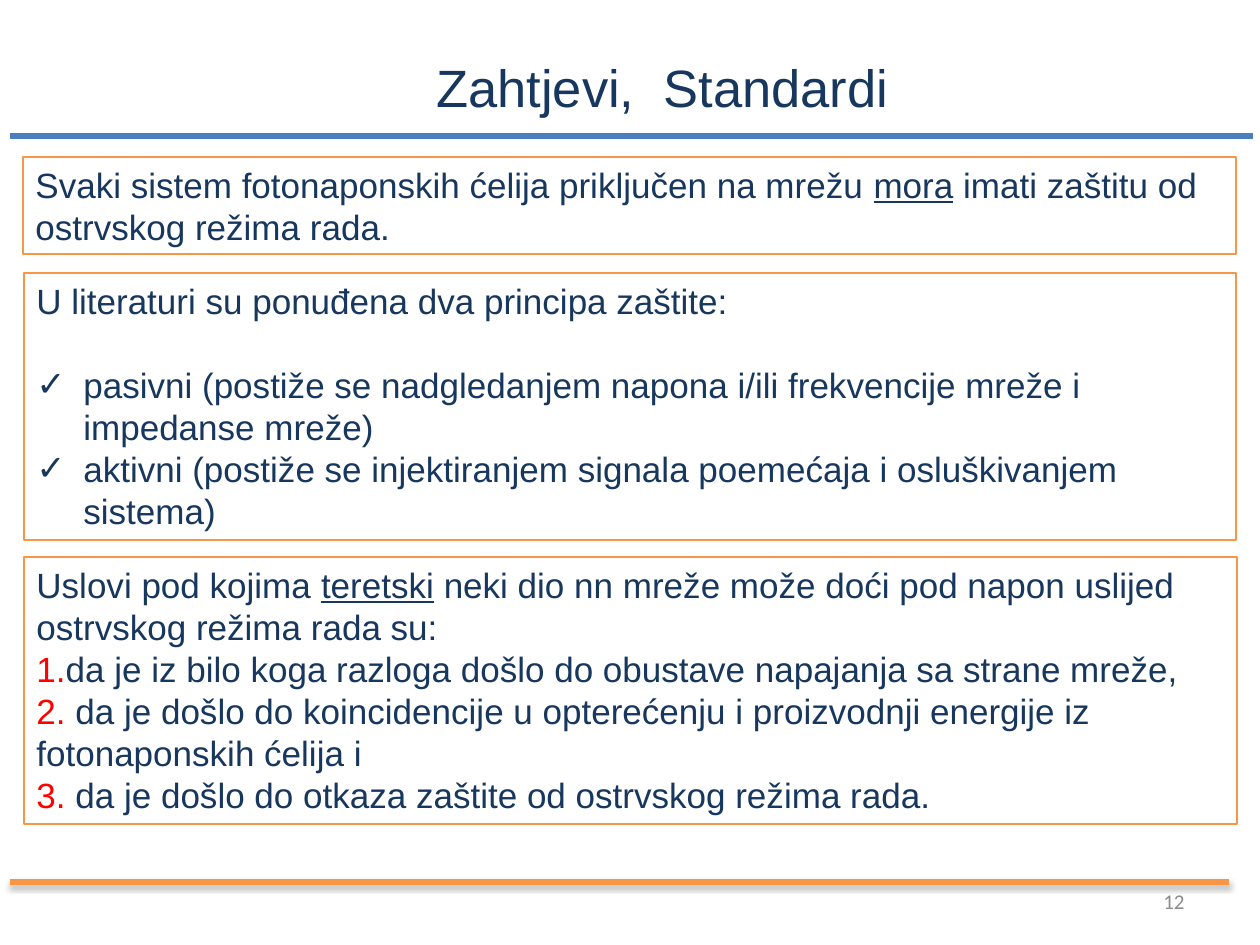
"""Build the slide on requirements and standards for islanding protection."""
from lxml import etree
from pptx import Presentation
from pptx.dml.color import RGBColor
from pptx.enum.shapes import MSO_CONNECTOR
from pptx.enum.text import MSO_ANCHOR, MSO_AUTO_SIZE, PP_ALIGN
from pptx.oxml.ns import qn
from pptx.util import Emu, Pt

STRAIGHT = MSO_CONNECTOR.STRAIGHT
TOP, MIDDLE = MSO_ANCHOR.TOP, MSO_ANCHOR.MIDDLE
CENTER, RIGHT = PP_ALIGN.CENTER, PP_ALIGN.RIGHT
NO_AUTOFIT = MSO_AUTO_SIZE.NONE

NAVY = RGBColor(0x17, 0x37, 0x5E)
BLUE = RGBColor(0x4B, 0x7E, 0xBC)
ORANGE = RGBColor(0xF7, 0x96, 0x46)
RED = RGBColor(0xFF, 0x00, 0x00)
GRAY = RGBColor(0x8C, 0x8C, 0x8C)
CHECK = "✓"


def px(*lengths):
    return [Emu(round(length * 914400 / 126)) for length in lengths]


def add_rule(left, right, y, color):
    rule = slide.shapes.add_connector(STRAIGHT, *px(left, y, right, y))
    rule.line.color.rgb = color
    rule.line.width = Pt(3)
    return etree.SubElement(rule._element.spPr, qn("a:effectLst"))


prs = Presentation()
prs.slide_width, prs.slide_height = px(1260, 945)
slide = prs.slides.add_slide(prs.slide_layouts[5])

add_rule(10, 1253, 136, BLUE)
footer_effects = add_rule(10, 1229, 882, ORANGE)
shadow = etree.SubElement(footer_effects, qn("a:outerShdw"), blurRad="39370",
                          dist="22860", dir="5400000", rotWithShape="0")
shadow_color = etree.SubElement(shadow, qn("a:srgbClr"), val="000000")
etree.SubElement(shadow_color, qn("a:alpha"), val="35000")

title = slide.shapes.title
title.left, title.top, title.width, title.height = px(422, 49, 481, 77)
title_frame = title.text_frame
title_frame.text = "Zahtjevi,  Standardi"
title_frame.word_wrap = False
title_frame.auto_size = NO_AUTOFIT
title_frame.vertical_anchor = TOP
heading = title_frame.paragraphs[0]
heading.alignment = CENTER
heading.font.name = "Arial"
heading.font.size = Pt(30)
heading.font.color.rgb = NAVY

statements = [
    ((23, 157, 1213, 97), [
        ("", [("Svaki sistem fotonaponskih ćelija priključen na mrežu ", ""),
              ("mora", "underline"),
              (" imati zaštitu od ostrvskog režima rada.", "")]),
    ]),
    ((24, 273, 1212, 267), [
        ("", [("U literaturi su ponuđena dva principa zaštite:", "")]),
        (CHECK, [("pasivni (postiže se nadgledanjem napona i/ili frekvencije "
                  "mreže i impedanse mreže)", "")]),
        (CHECK, [("aktivni (postiže se injektiranjem signala poemećaja i "
                  "osluškivanjem sistema)", "")]),
    ]),
    ((24, 557, 1213, 267), [
        ("", [("Uslovi pod kojima ", ""),
              ("teretski", "underline"),
              (" neki dio nn mreže može doći pod napon uslijed ostrvskog "
               "režima rada su:", "")]),
        ("", [("1.", "number"),
              ("da je iz bilo koga razloga došlo do obustave napajanja sa "
               "strane mreže,", "")]),
        ("", [("2. ", "number"),
              ("da je došlo do koincidencije u opterećenju i proizvodnji "
               "energije iz fotonaponskih ćelija i", "")]),
        ("", [("3. ", "number"),
              ("da je došlo do otkaza zaštite od ostrvskog režima rada.", "")]),
    ]),
]

for bounds, paragraphs in statements:
    statement = slide.shapes.add_textbox(*px(*bounds))
    statement.line.color.rgb = ORANGE
    statement.line.width = Pt(0.75)
    frame = statement.text_frame
    frame.word_wrap = True
    previous_bullet = ""
    for index, (bullet, runs) in enumerate(paragraphs):
        paragraph = frame.add_paragraph() if index else frame.paragraphs[0]
        paragraph.line_spacing = Pt(24)
        if bullet:
            if not previous_bullet:
                paragraph.space_before = Pt(24)
            properties = paragraph._p.get_or_add_pPr()
            indent, = px(47)
            properties.set("marL", str(indent))
            properties.set("indent", str(-indent))
            etree.SubElement(properties, qn("a:buFont"), typeface="Arial")
            etree.SubElement(properties, qn("a:buChar"), char=bullet)
        previous_bullet = bullet
        paragraph.font.name = "Arial"
        paragraph.font.size = Pt(20)
        paragraph.font.color.rgb = NAVY
        for text, style in runs:
            run = paragraph.add_run()
            run.text = text
            if style == "underline":
                run.font.underline = True
            elif style == "number":
                run.font.color.rgb = RED

page_box = slide.shapes.add_textbox(*px(903, 876, 294, 50))
page_box.text_frame.word_wrap = True
page_box.text_frame.vertical_anchor = MIDDLE
page_number = page_box.text_frame.paragraphs[0]
page_number.text = "12"
page_number.alignment = RIGHT
page_number.font.name = "Calibri"
page_number.font.size = Pt(12)
page_number.font.color.rgb = GRAY

prs.save("out.pptx")
